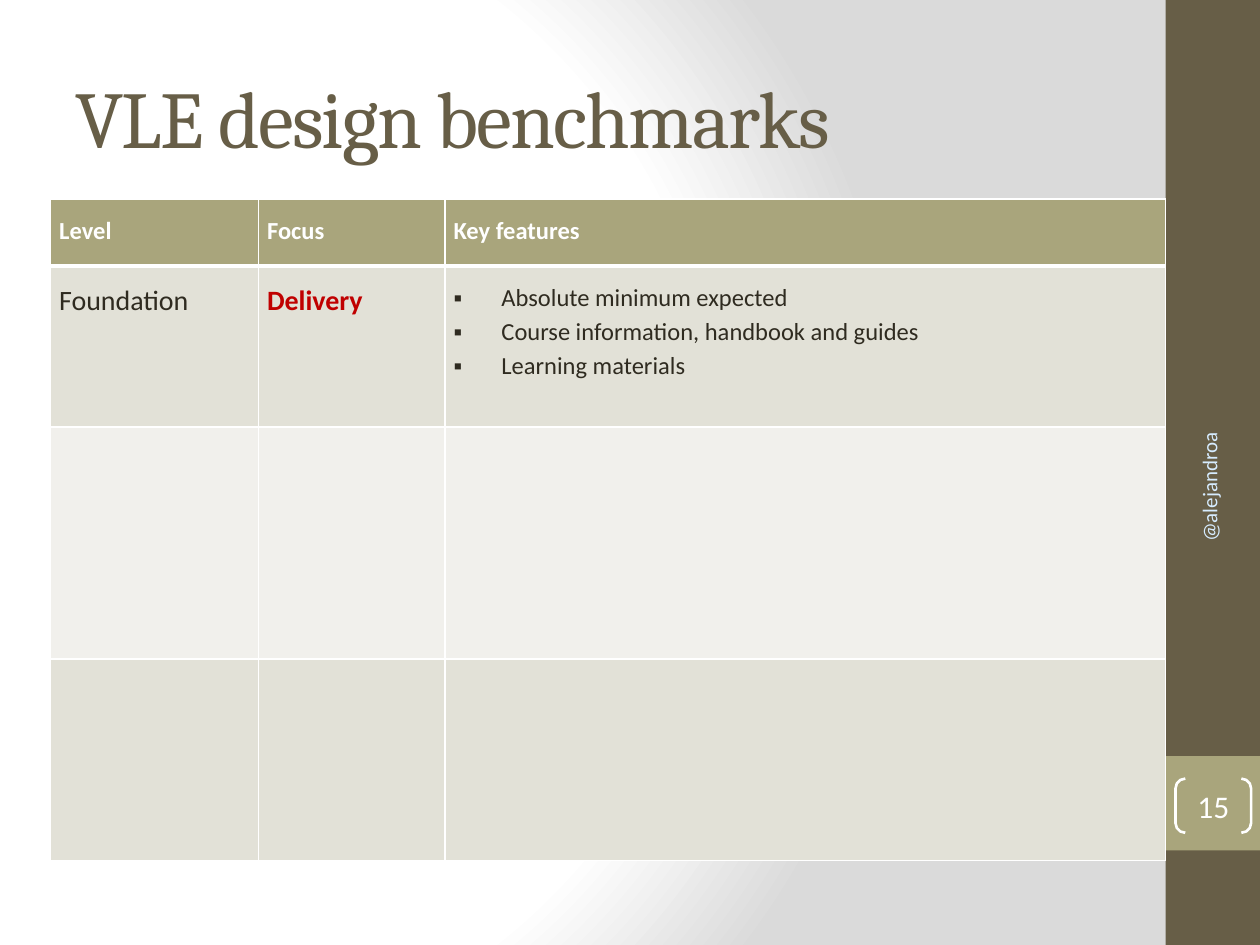
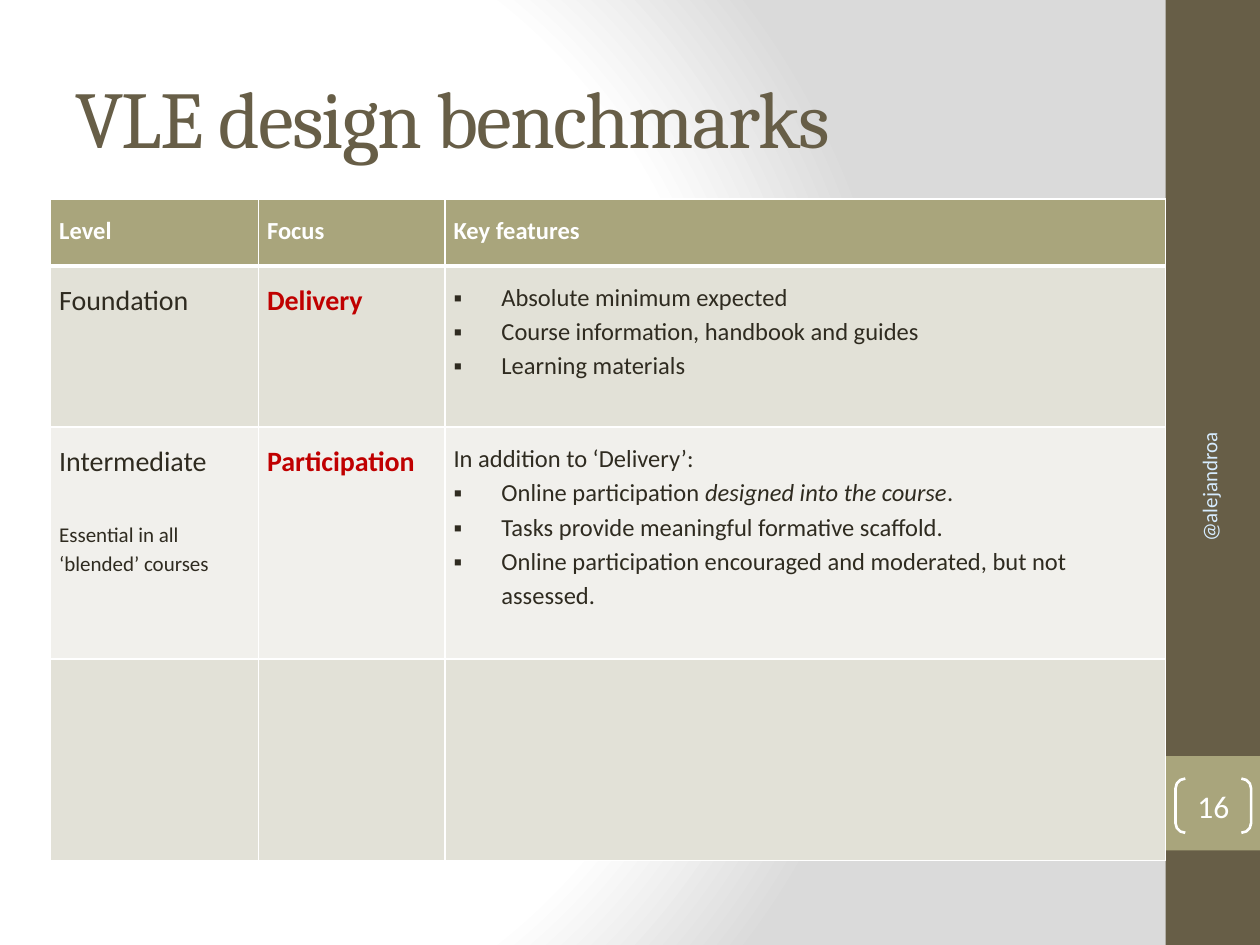
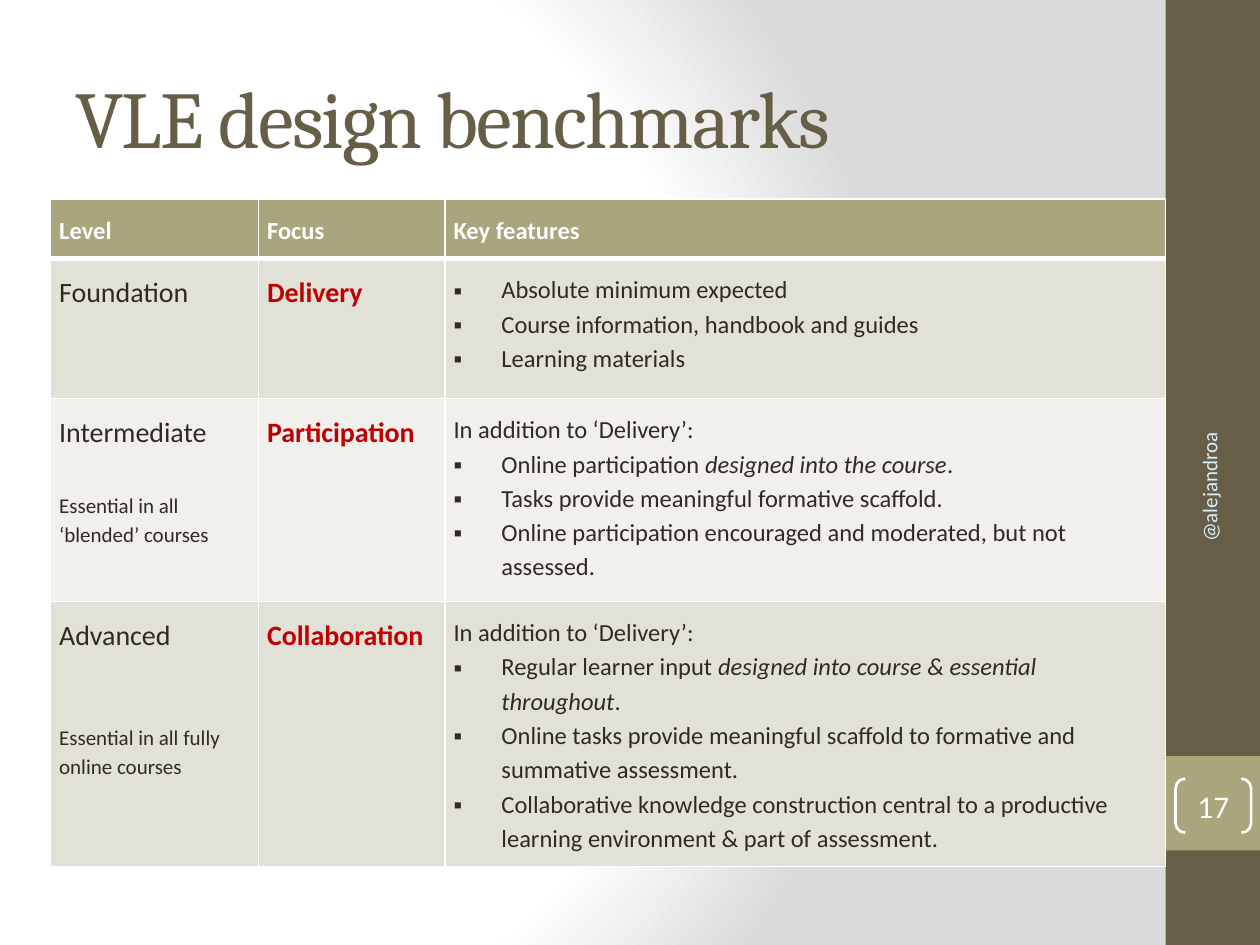
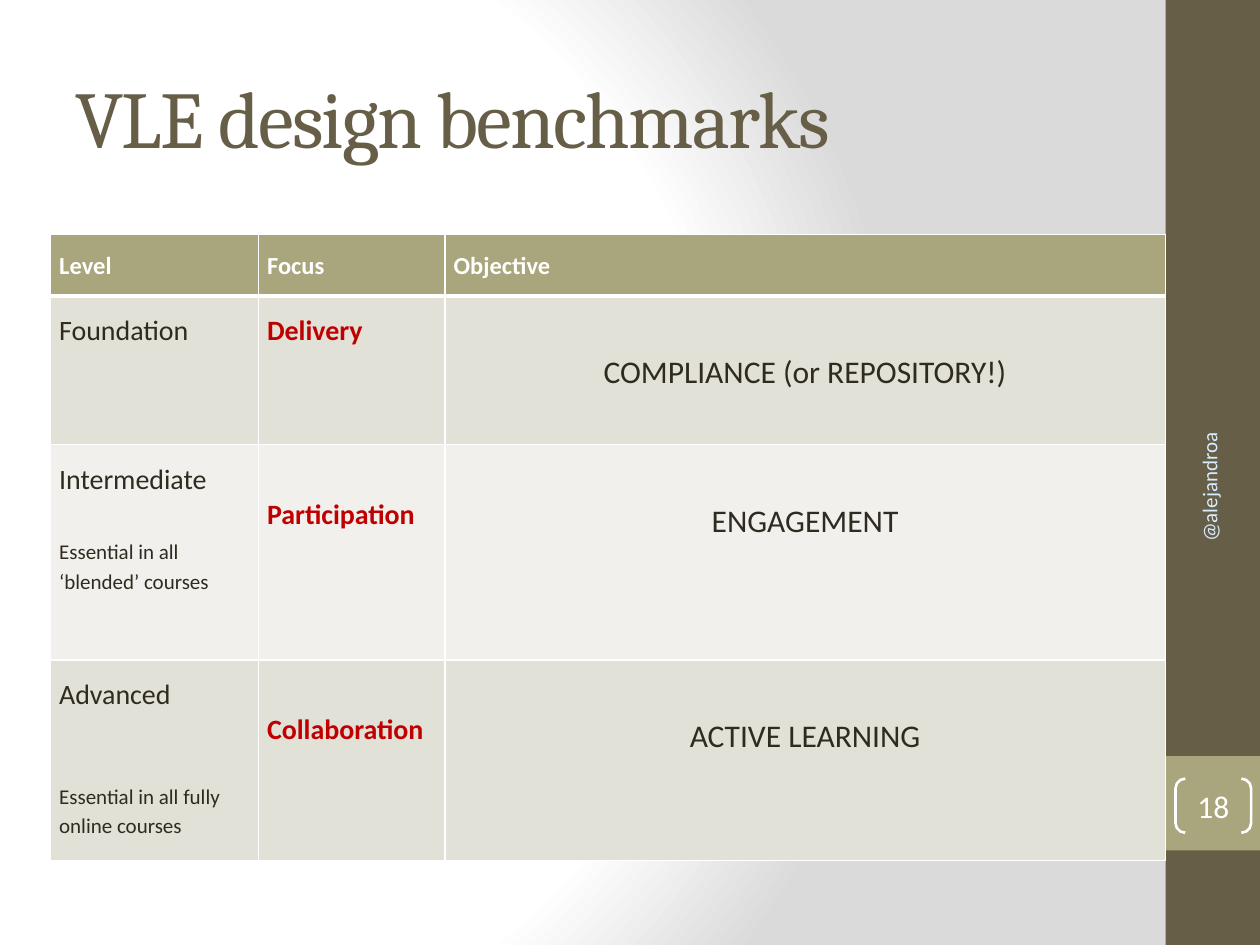
"""Build four slides that reveal a table of VLE design benchmarks."""
from lxml import etree
from pptx import Presentation
from pptx.dml.color import RGBColor
from pptx.enum.shapes import MSO_SHAPE
from pptx.enum.text import MSO_ANCHOR, PP_ALIGN
from pptx.oxml import parse_xml
from pptx.oxml.ns import nsdecls, qn
from pptx.util import Pt

PX = 9144
RECT, BRACKETS = MSO_SHAPE.RECTANGLE, MSO_SHAPE.DOUBLE_BRACKET
MIDDLE = MSO_ANCHOR.MIDDLE
LEFT, CENTER, RIGHT = PP_ALIGN.LEFT, PP_ALIGN.CENTER, PP_ALIGN.RIGHT

COLORS = {
    "white": "FFFFFF", "grey": "DADADA", "brown": "675E47", "olive": "A9A57C",
    "ink": "2F2B20", "red": "C00000", "handle": "D6ECFF",
    "odd_row": "E2E1D7", "even_row": "F1F0EC",
}
TITLE = "VLE design benchmarks"
TITLE_FONT = {"name": "Cambria", "size": Pt(46), "bold": False}
COLS = [165, 148, 572]
TABLE_LEFT = 40
INSETS = {"margin_left": 7 * PX, "margin_right": 7 * PX,
          "margin_top": 10 * PX, "margin_bottom": 10 * PX}
BULLET_INDENT = 38

STYLES = {
    "head": {"color": "white", "font": {"size": Pt(14), "bold": True}},
    "level": {"color": "ink", "font": {"size": Pt(16), "bold": False}},
    "note": {"color": "ink", "font": {"size": Pt(12), "bold": False},
             "para": {"space_before": Pt(22.5)}},
    "low_note": {"color": "ink", "font": {"size": Pt(12), "bold": False},
                 "para": {"space_before": Pt(39)}},
    "focus": {"color": "red", "font": {"size": Pt(16), "bold": True}},
    "low_focus": {"color": "red", "font": {"size": Pt(16), "bold": True},
                  "cell": {"margin_top": 38 * PX}},
    "intro": {"color": "ink", "font": {"size": Pt(14), "bold": False}},
    "bullet": {"color": "ink", "font": {"size": Pt(14), "bold": False}},
    "goal": {"color": "ink", "font": {"size": Pt(18), "bold": False},
             "para": {"alignment": CENTER}, "cell": {"margin_top": 41 * PX}},
}

LEVELS = [
    [("level", "Foundation")],
    [("level", "Intermediate"), ("note", "Essential in all ‘blended’ courses")],
    [("level", "Advanced"),
     ("low_note", "Essential in all fully online courses")],
]
FOCUSES = ["Delivery", "Participation", "Collaboration"]
FEATURES = [
    [("bullet", "Absolute minimum expected"),
     ("bullet", "Course information, handbook and guides"),
     ("bullet", "Learning materials")],
    [("intro", "In addition to ‘Delivery’:"),
     ("bullet", "Online participation *designed into the course*."),
     ("bullet", "Tasks provide meaningful formative scaffold."),
     ("bullet", "Online participation encouraged and moderated, "
                "but not assessed.")],
    [("intro", "In addition to ‘Delivery’:"),
     ("bullet", "Regular learner input "
                "*designed into course & essential throughout*."),
     ("bullet", "Online tasks provide meaningful scaffold to formative and "
                "summative assessment."),
     ("bullet", "Collaborative knowledge construction central to a productive "
                "learning environment & part of assessment.")],
]
GOALS = ["COMPLIANCE (or REPOSITORY!)", "ENGAGEMENT", "ACTIVE LEARNING"]

FEATURE_ROWS = [[LEVELS[i], [("focus", FOCUSES[i])], FEATURES[i]]
                for i in range(3)]
GOAL_ROWS = [[LEVELS[i], [("low_focus" if i else "focus", FOCUSES[i])],
              [("goal", GOALS[i])]] for i in range(3)]

SLIDES = [
    {"number": 15, "top": 158, "heights": [53, 128, 184, 160],
     "last": "Key features", "rows": FEATURE_ROWS[:1]},
    {"number": 16, "top": 158, "heights": [53, 128, 184, 160],
     "last": "Key features", "rows": FEATURE_ROWS[:2]},
    {"number": 17, "top": 158, "heights": [47, 111, 161, 207],
     "last": "Key features", "rows": FEATURE_ROWS},
    {"number": 18, "top": 186, "heights": [49, 118, 171, 159],
     "last": "Objective", "rows": GOAL_ROWS},
]


def rgb(color):
    """Return the named colour."""
    return RGBColor.from_string(COLORS[color])


def px(*lengths):
    """Turn px lengths into EMU."""
    return [n * PX for n in lengths]


def apply(target, values):
    """Set attributes of an object from a dict."""
    for name, value in values.items():
        setattr(target, name, value)


def add_run(p, text, color, font):
    """Add a formatted run to a paragraph."""
    r = p.add_run()
    r.text = text
    apply(r.font, {"name": "Calibri", **font})
    r.font.color.rgb = rgb(color)
    return r


def add_band(slide, box, color):
    """Add a plain filled rectangle."""
    sp = slide.shapes.add_shape(RECT, *px(*box))
    sp.shadow.inherit = False
    sp.fill.solid()
    sp.fill.fore_color.rgb = rgb(color)
    sp.line.fill.background()
    return sp


def set_background(master):
    """Give the master its radial gradient."""
    c_sld = master.element.find(qn("p:cSld"))
    for bg in c_sld.findall(qn("p:bg")):
        c_sld.remove(bg)
    stops = "".join(
        f'<a:gs pos="{pos * 1000}"><a:srgbClr val="{COLORS[color]}"/></a:gs>'
        for pos, color in ((0, "white"), (75, "white"), (100, "grey")))
    c_sld.insert(0, parse_xml(
        f'<p:bg {nsdecls("p", "a")}><p:bgPr><a:gradFill rotWithShape="1">'
        f'<a:gsLst>{stops}</a:gsLst><a:path path="circle"><a:fillToRect '
        'l="20000" t="50000" r="100000" b="50000"/></a:path></a:gradFill>'
        '<a:effectLst/></p:bgPr></p:bg>'))


def move_bands_to_layout(slide):
    """Draw the side bands and hand them to the layout."""
    tree = slide.slide_layout.shapes.element
    bands = [((925, 0, 75, 750), "brown"), ((925, 600, 75, 75), "olive")]
    for i, (box, color) in enumerate(bands):
        tree.insert(2 + i, add_band(slide, box, color).element)


def add_title(slide):
    """Place and format the title placeholder."""
    sp = slide.shapes.title
    sp.left, sp.top, sp.width, sp.height = px(50, 30, 833, 125)
    tf = sp.text_frame
    apply(tf, {"vertical_anchor": MIDDLE, "word_wrap": True})
    p = tf.paragraphs[0]
    p.alignment = LEFT
    r = add_run(p, TITLE, "brown", TITLE_FONT)
    r.font.element.set("spc", "-100") if hasattr(r.font, "element") else \
        r._r.get_or_add_rPr().set("spc", "-100")


def add_number(slide, number):
    """Add the slide number between brackets."""
    sp = slide.shapes.add_shape(BRACKETS, *px(933, 618, 60, 43))
    sp.shadow.inherit = False
    sp.adjustments[0] = 0.18
    sp.fill.background()
    sp.line.color.rgb = rgb("white")
    sp.line.width = Pt(1.5)
    tf = sp.text_frame
    apply(tf, {**dict.fromkeys(INSETS, 0), "vertical_anchor": MIDDLE})
    p = tf.paragraphs[0]
    p.alignment = CENTER
    add_run(p, str(number), "white", {"size": Pt(18)})


def add_handle(slide):
    """Add the author handle turned along the side band."""
    sp = slide.shapes.add_textbox(*px(830, 443, 259, 40))
    sp.rotation = 270
    tf = sp.text_frame
    apply(tf, {"word_wrap": True, "vertical_anchor": MIDDLE})
    p = tf.paragraphs[0]
    p.alignment = RIGHT
    add_run(p, "@alejandroa", "handle", {"size": Pt(12)})


def add_bullet(p):
    """Give a paragraph a square bullet and hanging indent."""
    p_pr = p._p.get_or_add_pPr()
    p_pr.set("marL", str(BULLET_INDENT * PX))
    p_pr.set("indent", str(-BULLET_INDENT * PX))
    etree.SubElement(p_pr, qn("a:buFont"), typeface="Arial")
    etree.SubElement(p_pr, qn("a:buChar"), char="▪")


def set_borders(cell, bottom):
    """Draw white borders round a cell, with its own bottom width."""
    tc_pr = cell._tc.get_or_add_tcPr()
    for side, width in (("L", 1), ("R", 1), ("T", 1), ("B", bottom)):
        ln = etree.SubElement(tc_pr, qn(f"a:ln{side}"), w=str(Pt(width)))
        fill = etree.SubElement(ln, qn("a:solidFill"))
        etree.SubElement(fill, qn("a:srgbClr"), val=COLORS["white"])


def fill_cell(cell, paragraphs, color, bottom):
    """Fill a cell with styled paragraphs; asterisks enclose italics."""
    set_borders(cell, bottom)
    cell.fill.solid()
    cell.fill.fore_color.rgb = rgb(color)
    apply(cell, INSETS)
    tf = cell.text_frame
    for i, (kind, text) in enumerate(paragraphs):
        style = STYLES[kind]
        p = tf.add_paragraph() if i else tf.paragraphs[0]
        apply(p, {"line_spacing": 1.15, **style.get("para", {})})
        apply(cell, style.get("cell", {}))
        if kind == "bullet":
            add_bullet(p)
        for j, part in enumerate(text.split("*")):
            add_run(p, part, style["color"],
                    {**style["font"], "italic": j % 2 == 1})


def add_benchmarks(slide, top, heights, last, rows):
    """Add the benchmark table, leaving unrevealed rows empty."""
    table = slide.shapes.add_table(
        len(heights), len(COLS),
        *px(TABLE_LEFT, top, sum(COLS), sum(heights))).table
    for col, width in zip(table.columns, COLS):
        col.width = width * PX
    head = [[("head", text)] for text in ("Level", "Focus", last)]
    empty = [[[]] * len(COLS)] * (len(heights) - 1 - len(rows))
    for i, content in enumerate([head, *rows, *empty]):
        table.rows[i].height = heights[i] * PX
        color = "olive" if i == 0 else "odd_row" if i % 2 else "even_row"
        for j, paragraphs in enumerate(content):
            fill_cell(table.cell(i, j), paragraphs, color, 1 if i else 3)


def main():
    """Build and save the presentation."""
    prs = Presentation()
    prs.slide_width, prs.slide_height = px(1000, 750)
    set_background(prs.slide_master)
    layout = prs.slide_layouts[5]
    for i, page in enumerate(SLIDES):
        slide = prs.slides.add_slide(layout)
        if i == 0:
            move_bands_to_layout(slide)
        add_title(slide)
        add_benchmarks(slide, page["top"], page["heights"], page["last"],
                       page["rows"])
        add_number(slide, page["number"])
        add_handle(slide)
    prs.save("out.pptx")


if __name__ == "__main__":
    main()
